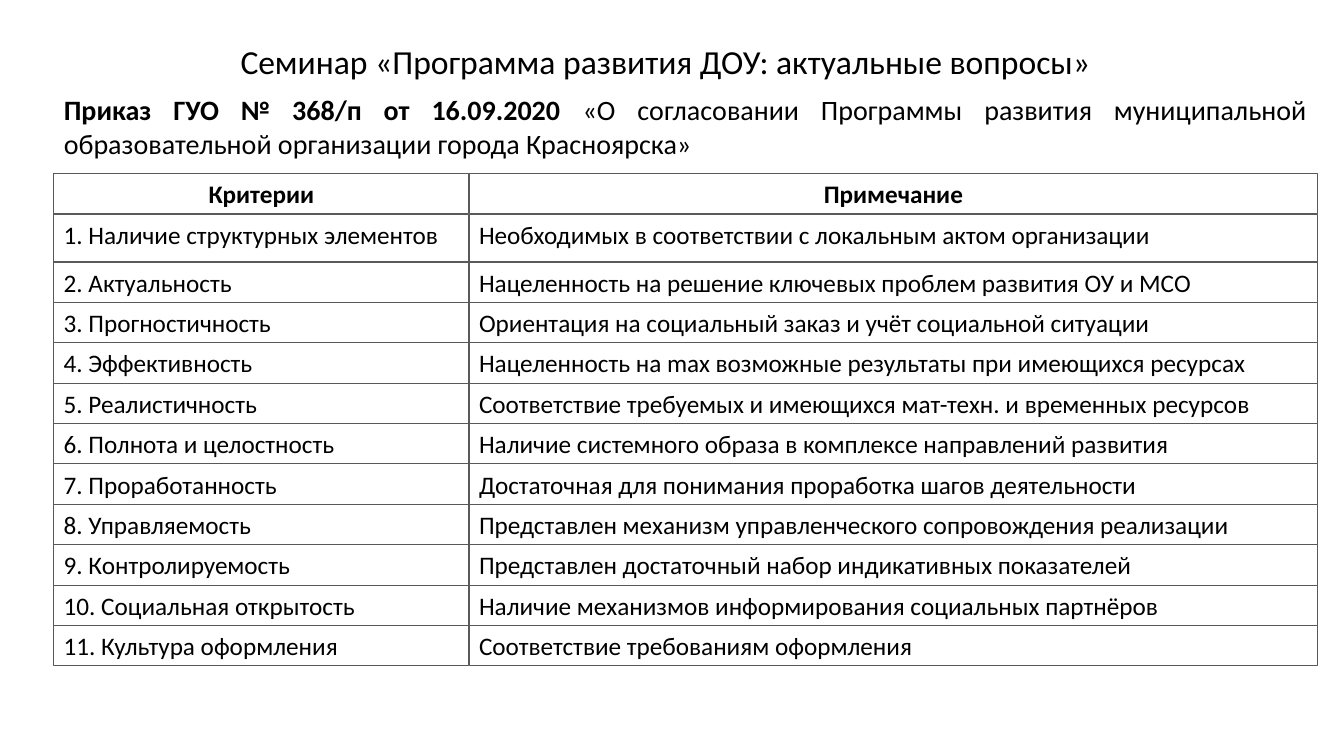
import lxml.etree
import pptx
import pptx.dml.color
import pptx.enum.shapes
import pptx.enum.text
import pptx.oxml.ns
import pptx.util

ALIGN = pptx.enum.text.PP_ALIGN
ANCHOR = pptx.enum.text.MSO_ANCHOR
FIT = pptx.enum.text.MSO_AUTO_SIZE
qn = pptx.oxml.ns.qn

TITLE = "Семинар «Программа развития ДОУ: актуальные вопросы» "
ORDER_NUMBER = "Приказ ГУО № 368/п от 16.09.2020 "
ORDER_SUBJECT = ("«О согласовании Программы развития муниципальной "
                 "образовательной организации города Красноярска»")
HEADINGS = ("Критерии", "Примечание")
CRITERIA = [
    ("Наличие структурных элементов", "Необходимых в соответствии с локальным актом организации"),
    ("Актуальность", "Нацеленность на решение ключевых проблем развития ОУ и МСО"),
    ("Прогностичность", "Ориентация на социальный заказ и учёт социальной ситуации"),
    ("Эффективность", "Нацеленность на max возможные результаты при имеющихся ресурсах"),
    ("Реалистичность", "Соответствие требуемых и имеющихся мат-техн. и временных ресурсов"),
    ("Полнота и целостность", "Наличие системного образа в комплексе направлений развития"),
    ("Проработанность", "Достаточная для понимания проработка шагов деятельности"),
    ("Управляемость", "Представлен механизм управленческого сопровождения реализации"),
    ("Контролируемость", "Представлен достаточный набор индикативных показателей"),
    ("Социальная открытость", "Наличие механизмов информирования социальных партнёров"),
    ("Культура оформления", "Соответствие требованиям оформления"),
]


def color(value):
    return pptx.dml.color.RGBColor.from_string(value)


def add_text(paragraph, text, size=18, bold=False, fill="000000", font="Calibri",
             align=ALIGN.LEFT, line_spacing=None):
    paragraph.alignment = align
    paragraph.line_spacing = line_spacing
    paragraph.space_before = pptx.util.Pt(0)
    run = paragraph.add_run()
    run.text = text
    run.font.name = font
    run.font.size = pptx.util.Pt(size)
    run.font.bold = bold
    run.font.color.rgb = color(fill)


class SeminarSlide:
    """Builds one slide, with lengths given in percent of its size."""

    border = "595959"
    border_width = pptx.util.Pt(0.75)

    def __init__(self, deck):
        self.deck = deck
        self.slide = deck.slides.add_slide(deck.slide_layouts[1])

    def area(self, left, top, width, height):
        across, down = self.deck.slide_width / 100, self.deck.slide_height / 100
        return (round(left * across), round(top * down),
                round(width * across), round(height * down))

    def frame(self, holder, anchor, fit=FIT.NONE):
        frame = holder.text_frame
        frame.word_wrap = True
        frame.auto_size = fit
        frame.vertical_anchor = anchor
        return frame.paragraphs[0]

    def place(self, holder, area, anchor):
        holder.left, holder.top, holder.width, holder.height = self.area(*area)
        return self.frame(holder, anchor)

    def title(self, text, *area):
        heading = self.place(self.slide.shapes.title, area, ANCHOR.MIDDLE)
        add_text(heading, text, size=24, align=ALIGN.CENTER, line_spacing=0.9)

    def order(self, number, subject, *area):
        order = self.place(self.slide.placeholders[1], area, ANCHOR.TOP)
        add_text(order, number, size=20, bold=True, align=ALIGN.JUSTIFY)
        add_text(order, subject, size=20, align=ALIGN.JUSTIFY)
        properties = order._p.get_or_add_pPr()
        properties.set("marL", "0")
        properties.set("indent", "0")
        lxml.etree.SubElement(properties, qn("a:buNone"))

    def cell(self, row, text, *area, header=False):
        cell = row.shapes.add_shape(
            pptx.enum.shapes.MSO_SHAPE.RECTANGLE, *self.area(*area))
        cell.shadow.inherit = False
        cell.fill.background()
        cell.line.color.rgb = color(self.border)
        cell.line.width = self.border_width
        add_text(self.frame(cell, ANCHOR.TOP, FIT.SHAPE_TO_FIT_TEXT), text, bold=header,
                 align=ALIGN.CENTER if header else ALIGN.LEFT)

    def row(self, texts, left, top, widths, height, header=False):
        row = self.slide.shapes.add_group_shape()
        for text, width in zip(texts, widths):
            self.cell(row, text, left, top, width, height, header=header)
            left += width


def main():
    deck = pptx.Presentation()
    deck.slide_width = pptx.util.Inches(13.33)
    deck.slide_height = pptx.util.Inches(7.5)
    seminar = SeminarSlide(deck)
    seminar.title(TITLE, 4, 5.2, 91.6, 6.3)
    seminar.order(ORDER_NUMBER, ORDER_SUBJECT, 4, 11.6, 94, 10.2)

    left, widths, height = 4, (30.9, 63.15), 5.34
    seminar.row(HEADINGS, left, 22.93, widths, height, header=True)
    top = 28.4
    for number, (name, note) in enumerate(CRITERIA, 1):
        row_height = 6.27 if number == 1 else height
        seminar.row((f"{number}. {name}", note), left, top, widths, row_height)
        top += row_height
    deck.save("out.pptx")


if __name__ == "__main__":
    main()
